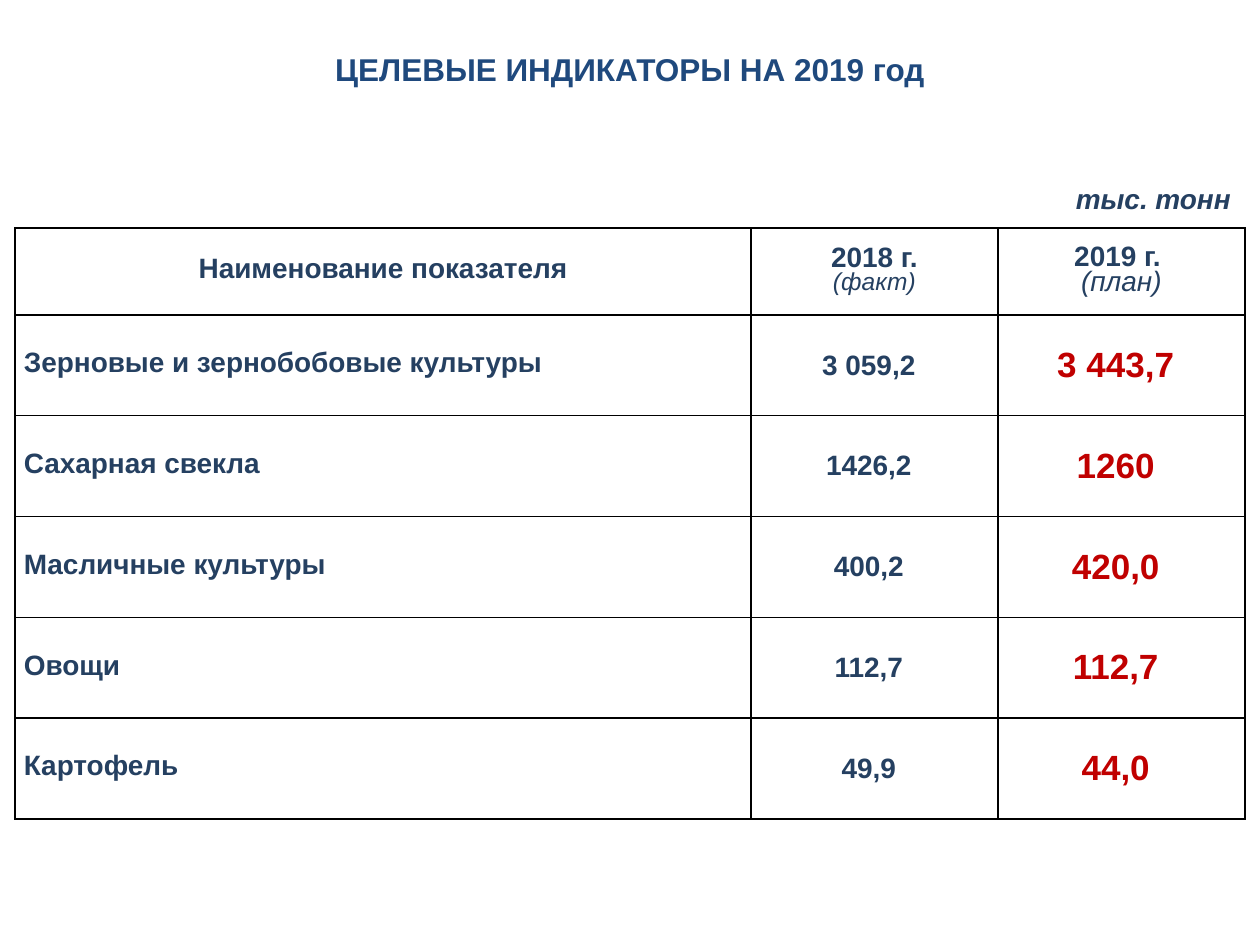
"""Build the slide of 2019 crop target indicators."""
from lxml import etree
from pptx import Presentation
from pptx.dml.color import RGBColor
from pptx.enum.text import MSO_ANCHOR, PP_ALIGN
from pptx.oxml.ns import qn
from pptx.util import Inches, Pt

LEFT, CENTER = PP_ALIGN.LEFT, PP_ALIGN.CENTER
MIDDLE = MSO_ANCHOR.MIDDLE

THEME = {
    "font": "Arial",
    "title": {"size": 18, "color": "1F497D"},
    "text": {"size": 16, "color": "254061"},
    "fact_note": {"size": 14, "color": "254061"},
    "plan": {"size": 20, "color": "C00000"},
    "border": "000000",
}
HEADER_INSETS = {"margin_left": 0.07, "margin_top": 0.04, "margin_right": 0.07, "margin_bottom": 0.04}
NAME_INSETS = {"margin_left": 0.07, "margin_top": 0, "margin_right": 0, "margin_bottom": 0}
VALUE_INSETS = {"margin_left": 0, "margin_top": 0, "margin_right": 0.09, "margin_bottom": 0}

CROPS = [
    ("Зерновые и зернобобовые культуры", "3 059,2", "3 443,7"),
    ("Сахарная свекла", "1426,2", "1260"),
    ("Масличные культуры", "400,2", "420,0"),
    ("Овощи", "112,7", "112,7"),
    ("Картофель", "49,9", "44,0"),
]


def write(paragraph, text, role="text", bold=True, italic=False):
    """Add a run in the style of a theme role."""
    run = paragraph.add_run()
    run.text = text
    style = {"name": THEME["font"], "size": Pt(THEME[role]["size"]), "bold": bold, "italic": italic}
    for attribute, value in style.items():
        setattr(run.font, attribute, value)
    run.font.color.rgb = RGBColor.from_string(THEME[role]["color"])


def format_cell(cell, insets, align, spacing=None):
    """Set insets, alignment and borders, and return the first paragraph."""
    for side, inset in insets.items():
        setattr(cell, side, Inches(inset))
    cell.vertical_anchor = MIDDLE
    properties = cell._tc.get_or_add_tcPr()
    for edge in ("a:lnL", "a:lnR", "a:lnT", "a:lnB"):
        line = etree.SubElement(properties, qn(edge), w=str(Pt(1)))
        fill = etree.SubElement(line, qn("a:solidFill"))
        etree.SubElement(fill, qn("a:srgbClr"), val=THEME["border"])
    cell.fill.background()
    paragraph = cell.text_frame.paragraphs[0]
    paragraph.alignment = align
    paragraph.line_spacing = spacing
    return paragraph


prs = Presentation()
prs.slide_width, prs.slide_height = Inches(10), Inches(7.5)
slide = prs.slides.add_slide(prs.slide_layouts[5])

title = slide.shapes.title
title.left, title.top, title.width, title.height = Inches(0), Inches(0.35), Inches(10), Inches(0.4)
title.text_frame.vertical_anchor = MIDDLE
heading = title.text_frame.paragraphs[0]
heading.alignment = CENTER
write(heading, "ЦЕЛЕВЫЕ ИНДИКАТОРЫ НА 2019 год", "title")

indicators = slide.shapes.add_table(
    len(CROPS) + 1, 3, Inches(0.12), Inches(1.81), Inches(9.76), Inches(4.69)
).table
indicators.first_row = False
indicators.horz_banding = False
for column, width in zip(indicators.columns, (5.84, 1.96, 1.96)):
    column.width = Inches(width)
for row in indicators.rows:
    row.height = Inches(0.8)
indicators.rows[0].height = Inches(0.69)

name_head, fact_head, plan_head = (
    format_cell(indicators.cell(0, column), HEADER_INSETS, CENTER, 0.8) for column in range(3)
)
write(name_head, "Наименование показателя")
write(fact_head, "2018 г.")
fact_note = indicators.cell(0, 1).text_frame.add_paragraph()
fact_note.alignment = CENTER
fact_note.line_spacing = 0.8
write(fact_note, "(факт)", "fact_note", bold=False, italic=True)
write(plan_head, "2019 г. ")
plan_head.add_line_break()
write(plan_head, "(план)", bold=False, italic=True)

for row, (crop, fact, plan) in enumerate(CROPS, start=1):
    write(format_cell(indicators.cell(row, 0), NAME_INSETS, LEFT, 0.8), crop)
    write(format_cell(indicators.cell(row, 1), VALUE_INSETS, CENTER), fact)
    write(format_cell(indicators.cell(row, 2), VALUE_INSETS, CENTER), plan, "plan")

unit = slide.shapes.add_textbox(Inches(8.44), Inches(1.39), Inches(1.45), Inches(0.37))
unit.text_frame.word_wrap = False
write(unit.text_frame.paragraphs[0], "тыс. тонн", italic=True)

prs.save("out.pptx")
